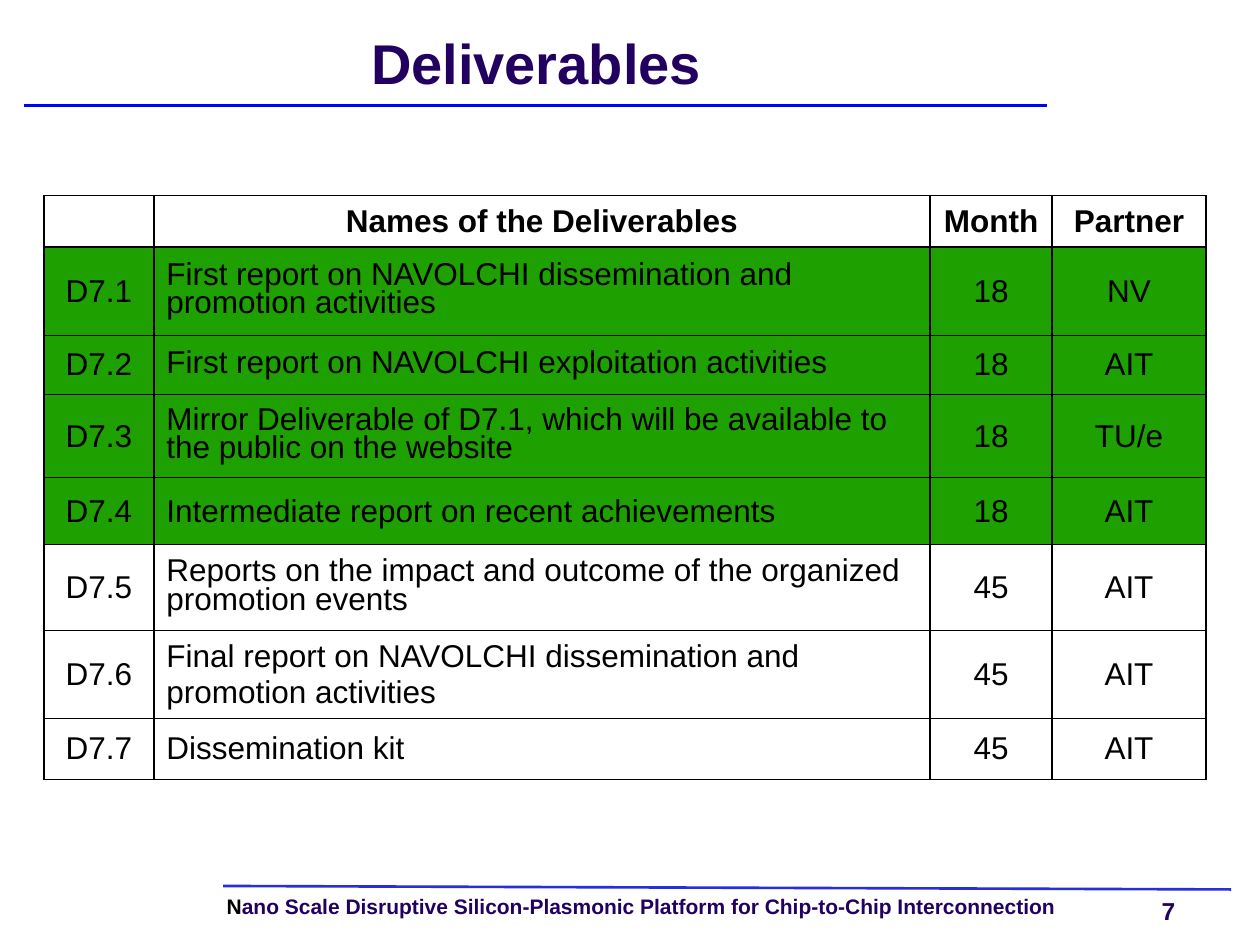
from lxml import etree
from pptx import Presentation
from pptx.dml.color import RGBColor
from pptx.enum.shapes import MSO_CONNECTOR
from pptx.enum.text import MSO_ANCHOR, PP_ALIGN
from pptx.oxml.ns import qn
from pptx.util import Cm, Pt

STRAIGHT = MSO_CONNECTOR.STRAIGHT
TOP, MIDDLE = MSO_ANCHOR.TOP, MSO_ANCHOR.MIDDLE
LEFT, CENTER = PP_ALIGN.LEFT, PP_ALIGN.CENTER
HUES = {"ink": "000000", "navy": "220060", "blue": "0000FF",
        "foot": "262FDA", "done": "1EA000"}


def add_run(para, text, size, hue, bold=True):
    run = para.add_run()
    run.text = text
    font = run.font
    font.name, font.size, font.bold = "Arial", Pt(size), bold
    font.color.rgb = RGBColor.from_string(HUES[hue])


prs = Presentation()
prs.slide_width, prs.slide_height = Cm(25.4), Cm(19.05)
slide = prs.slides.add_slide(prs.slide_layouts[6])
shapes = slide.shapes

# Rules under the title and above the footer
rules = [(0.48, 2.13, 21.11, 2.13, "blue"), (4.5, 17.86, 24.82, 17.93, "foot")]
for x1, y1, x2, y2, hue in rules:
    rule = shapes.add_connector(STRAIGHT, Cm(x1), Cm(y1), Cm(x2), Cm(y2))
    rule.line.color.rgb = RGBColor.from_string(HUES[hue])
    rule.line.width = Pt(1.5)
    etree.SubElement(rule._element.spPr, qn("a:effectLst"))

# Title, footer and page number: place, wrap, anchor, align, spacing, runs
texts = [
    ((0.51, 0.51, 20.6, 1.7), True, MIDDLE, CENTER, Pt(32),
     [("Deliverables", 32, "navy")]),
    ((4.57, 18.06, 18.14, 0.46), True, TOP, LEFT, 0.9,
     [("N", 12, "ink"),
      ("ano Scale Disruptive Silicon-Plasmonic Platform for "
       "Chip-to-Chip Interconnection", 12, "navy")]),
    ((23.42, 18.06, 1.02, 0.58), False, TOP, LEFT, 1.0, [("7", 14, "navy")]),
]
for place, wrap, anchor, align, gap, runs in texts:
    frame = shapes.add_textbox(*map(Cm, place)).text_frame
    frame.margin_left = frame.margin_right = 0
    frame.margin_top = frame.margin_bottom = 0
    frame.word_wrap, frame.vertical_anchor = wrap, anchor
    para = frame.paragraphs[0]
    para.alignment, para.line_spacing = align, gap
    for text, size, hue in runs:
        add_run(para, text, size, hue)

# Table of deliverables
rows = [
    ("", "Names of the Deliverables", "Month", "Partner"),
    ("D7.1", "First report on NAVOLCHI dissemination and promotion activities",
     "18", "NV"),
    ("D7.2", "First report on NAVOLCHI exploitation activities", "18", "AIT"),
    ("D7.3", "Mirror Deliverable of D7.1, which will be available to the "
     "public on the website", "18", "TU/e"),
    ("D7.4", "Intermediate report on recent achievements", "18", "AIT"),
    ("D7.5", "Reports on the impact and outcome of the organized promotion "
     "events", "45", "AIT"),
    ("D7.6", "Final report on NAVOLCHI dissemination and promotion activities",
     "45", "AIT"),
    ("D7.7", "Dissemination kit", "45", "AIT"),
]
widths = [2.21, 15.65, 2.46, 3.1]
heights = [1.04, 1.78, 1.19, 1.68, 1.35, 1.73, 1.04, 1.22]
tight = {1, 2, 3, 5}
done = range(1, 5)

table = shapes.add_table(len(rows), len(widths), Cm(0.89), Cm(3.94),
                         Cm(sum(widths)), Cm(sum(heights))).table
table.first_row = table.horz_banding = False
for col, width in zip(table.columns, widths):
    col.width = Cm(width)
for row, height in zip(table.rows, heights):
    row.height = Cm(height)

for r, row in enumerate(rows):
    for c, text in enumerate(row):
        cell = table.cell(r, c)
        cell.vertical_anchor = MIDDLE
        # Borders come before the fill in the cell properties
        props = cell._tc.get_or_add_tcPr()
        for side in ("a:lnL", "a:lnR", "a:lnT", "a:lnB"):
            edge = etree.SubElement(props, qn(side), w=str(Pt(1)))
            solid = etree.SubElement(edge, qn("a:solidFill"))
            etree.SubElement(solid, qn("a:srgbClr"), val=HUES["ink"])
        if r in done:
            cell.fill.solid()
            cell.fill.fore_color.rgb = RGBColor.from_string(HUES["done"])
        else:
            cell.fill.background()
        para = cell.text_frame.paragraphs[0]
        para.alignment = LEFT if c == 1 and r else CENTER
        if c == 1 and r in tight:
            para.line_spacing = 0.8
        if text:
            add_run(para, text, 18, "ink", bold=r == 0)

prs.save("out.pptx")
